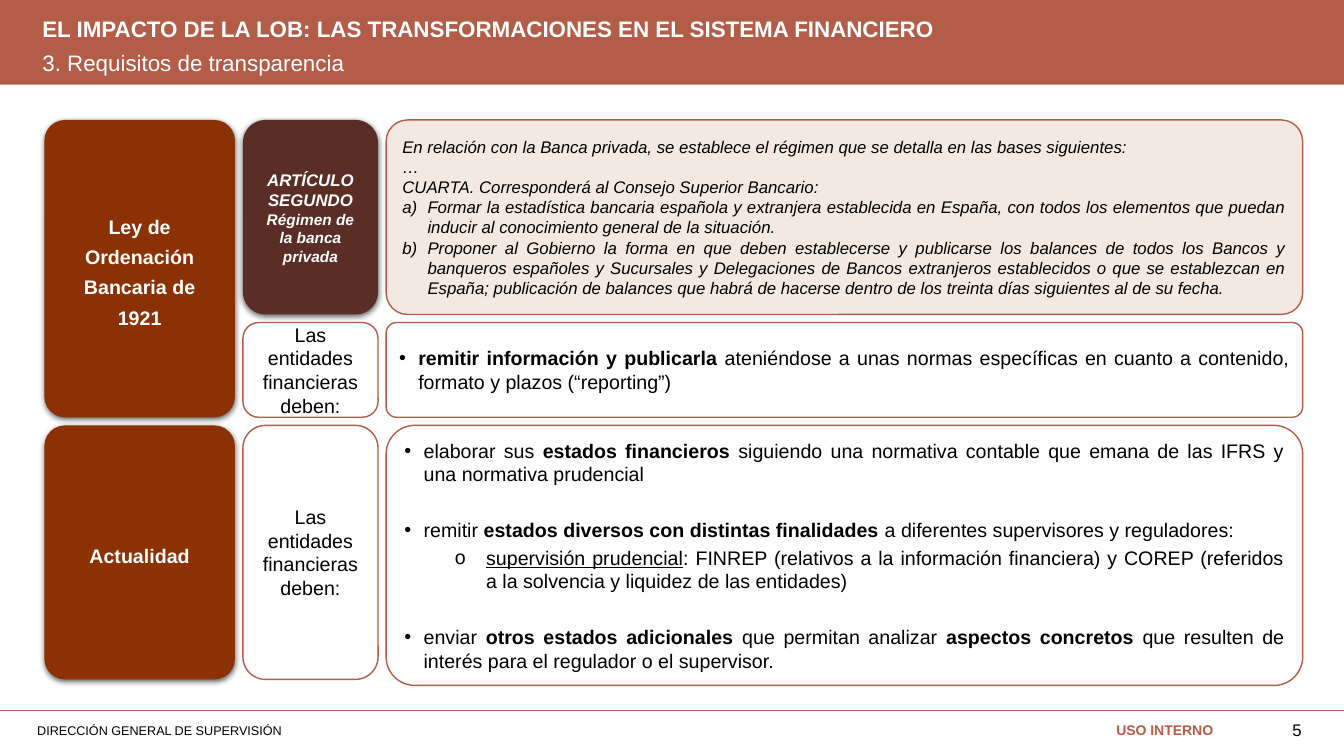
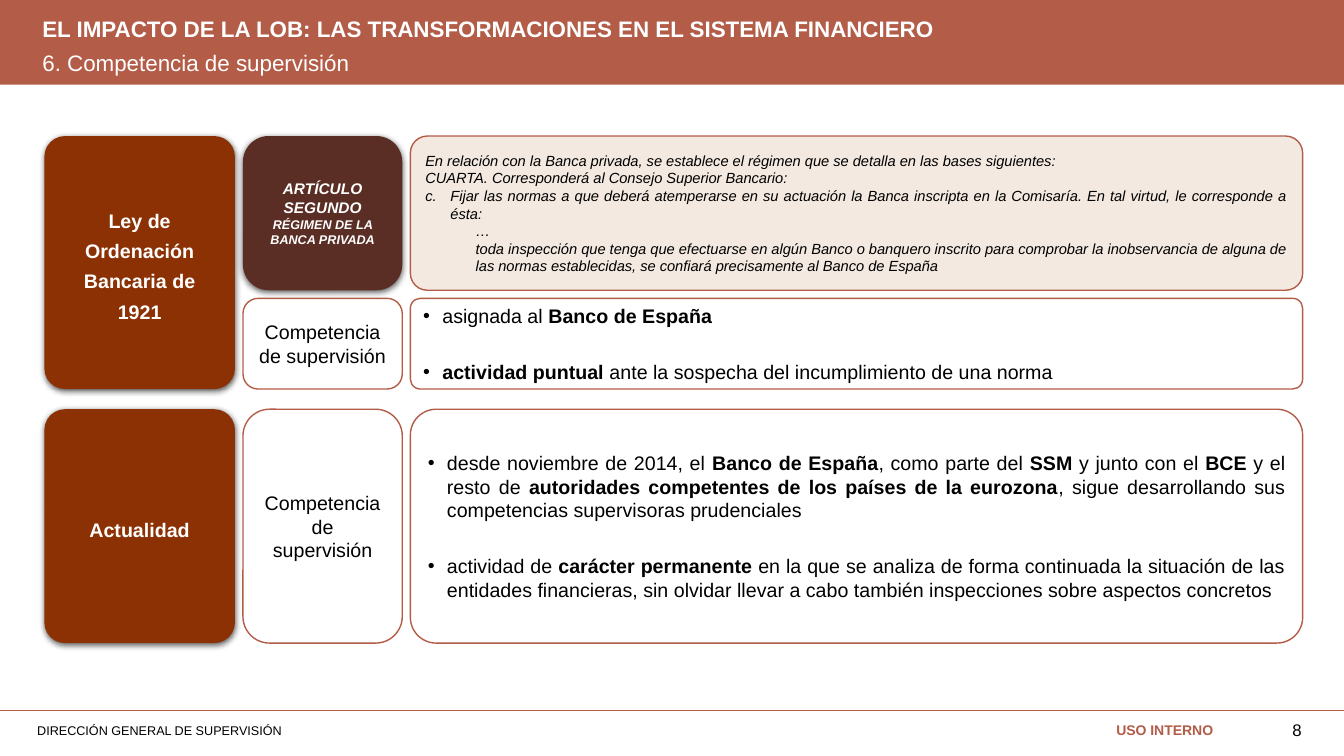
from lxml.etree import SubElement
from pptx import Presentation
from pptx.dml.color import RGBColor
from pptx.enum.shapes import MSO_CONNECTOR, MSO_SHAPE
from pptx.enum.text import MSO_ANCHOR, MSO_AUTO_SIZE, PP_ALIGN
from pptx.oxml.ns import qn
from pptx.util import Inches, Pt

FONT = "Arial"
COLORS = {
    "brick": "B35C48",
    "rust": "8B3104",
    "brown": "5A2E24",
    "cream": "F3E9E1",
    "white": "FFFFFF",
    "black": "000000",
}
PAGE_WIDTH, PAGE_HEIGHT = 13.33, 7.5
LEFT, MIDDLE_LEFT, RIGHT = 0.44, 2.41, 12.92
GAP = 0.08
LEFT_WIDTH = MIDDLE_LEFT - GAP - LEFT
LABEL_ROUNDING, QUOTE_ROUNDING = 0.108, 0.11
BLANK_LINE = 20
TITLE = "EL IMPACTO DE LA LOB: LAS TRANSFORMACIONES EN EL SISTEMA FINANCIERO"
LAW, TODAY = "Ley de Ordenación Bancaria de 1921", "Actualidad"

QUOTE_INTRO = "En relación con la Banca privada, se establece el régimen que se detalla en las bases siguientes:"
QUOTE_FOURTH = "CUARTA. Corresponderá al Consejo Superior Bancario:"
DOT = {"bullet": "•", "margin": 0.19, "hanging": 0.19, "after": 3}
DOT_APART = {**DOT, "before": BLANK_LINE}
LETTER = {"bullet": "alphaLcParenR", "margin": 0.25, "hanging": 0.25}
NESTED = {"bullet": "o", "margin": 0.81, "hanging": 0.31, "after": 3}

PAGES = [
    {
        "number": "5",
        "subtitle": "3. Requisitos de transparencia",
        "top": 1.19,
        "heights": (1.93, 0.94, 2.52),
        "section_gap": GAP,
        "last_height": 2.58,
        "middle_width": 1.34,
        "article": [("ARTÍCULO SEGUNDO", 12), ("Régimen de la banca privada", 11)],
        "question": "Las entidades financieras deben:",
        "quote_size": 12,
        "quote": [
            (QUOTE_INTRO, {}),
            ("…", {}),
            (QUOTE_FOURTH, {}),
            ("Formar la estadística bancaria española y extranjera establecida en España, con todos los elementos "
             "que puedan inducir al conocimiento general de la situación.", LETTER),
            ("Proponer al Gobierno la forma en que deben establecerse y publicarse los balances de todos los Bancos "
             "y banqueros españoles y Sucursales y Delegaciones de Bancos extranjeros establecidos o que se "
             "establezcan en España; publicación de balances que habrá de hacerse dentro de los treinta días "
             "siguientes al de su fecha.", LETTER),
        ],
        "past": [
            ("*remitir información y publicarla* ateniéndose a unas normas específicas en cuanto a contenido, "
             "formato y plazos (“reporting”)", DOT),
        ],
        "present": [
            ("elaborar sus *estados financieros* siguiendo una normativa contable que emana de las IFRS y una "
             "normativa prudencial", DOT),
            ("remitir *estados diversos con distintas finalidades* a diferentes supervisores y reguladores:",
             DOT_APART),
            ("*supervisión prudencial*: FINREP (relativos a la información financiera) y COREP (referidos a la "
             "solvencia y liquidez de las entidades)", {**NESTED, "emphasis": "underline"}),
            ("enviar *otros estados adicionales* que permitan analizar *aspectos concretos* que resulten de interés "
             "para el regulador o el supervisor.", DOT_APART),
        ],
    },
    {
        "number": "8",
        "subtitle": "6. Competencia de supervisión",
        "top": 1.35,
        "heights": (1.53, 0.9, 2.32),
        "section_gap": 0.2,
        "last_height": 2.32,
        "middle_width": 1.58,
        "article": [("ARTÍCULO SEGUNDO", 11), ("RÉGIMEN DE LA BANCA PRIVADA", 9)],
        "question": "Competencia de supervisión",
        "quote_size": 10.5,
        "quote": [
            (QUOTE_INTRO, {}),
            (QUOTE_FOURTH, {}),
            ("Fijar las normas a que deberá atemperarse en su actuación la Banca inscripta en la Comisaría. En tal "
             "virtud, le corresponde a ésta:", {**LETTER, "bullet": "alphaLcPeriod", "start": 3}),
            ("…", {"margin": 0.5}),
            ("toda inspección que tenga que efectuarse en algún Banco o banquero inscrito para comprobar la "
             "inobservancia de alguna de las normas establecidas, se confiará precisamente al Banco de España",
             {"margin": 0.5}),
        ],
        "past": [
            ("asignada al *Banco de España*", DOT),
            ("*actividad puntual* ante la sospecha del incumplimiento de una norma", DOT_APART),
        ],
        "present": [
            ("desde noviembre de 2014, el *Banco de España*, como parte del *SSM* y junto con el *BCE* y el resto de "
             "*autoridades competentes de los países de la eurozona*, sigue desarrollando sus competencias "
             "supervisoras prudenciales", DOT),
            ("actividad de *carácter permanente* en la que se analiza de forma continuada la situación de las "
             "entidades financieras, sin olvidar llevar a cabo también inspecciones sobre aspectos concretos",
             DOT_APART),
        ],
    },
]


def color(name):
    return RGBColor.from_string(COLORS[name])


def place(shape, left, top, width, height):
    shape.left, shape.top = Inches(left), Inches(top)
    shape.width, shape.height = Inches(width), Inches(height)


def set_bullet(para, bullet, margin, hanging, start):
    properties = para._p.get_or_add_pPr()
    properties.set("marL", str(Inches(margin)))
    properties.set("indent", str(-Inches(hanging)))
    if bullet is None:
        SubElement(properties, qn("a:buNone"))
    elif len(bullet) == 1:
        SubElement(properties, qn("a:buFont"), typeface=FONT)
        SubElement(properties, qn("a:buChar"), char=bullet)
    else:
        SubElement(properties, qn("a:buAutoNum"), type=bullet, startAt=str(start))


def add_text(frame, text, size=14, ink="black", bold=False, italic=False, align=PP_ALIGN.LEFT, spacing=None,
             before=0, after=0, bullet=None, margin=0, hanging=0, start=1, emphasis="bold"):
    para = frame.paragraphs[0]
    if para.runs:
        para = frame.add_paragraph()
    para.alignment = align
    para.space_before, para.space_after = Pt(before), Pt(after)
    if spacing:
        para.line_spacing = spacing
    set_bullet(para, bullet, margin, hanging, start)
    for index, piece in enumerate(text.split("*")):
        if not piece:
            continue
        span = para.add_run()
        span.text = piece
        font = span.font
        font.name, font.size, font.bold, font.italic = FONT, Pt(size), bold, italic
        font.color.rgb = color(ink)
        if index % 2:
            setattr(font, emphasis, True)


def add_textbox(page, left, top, width, height, text, **style):
    box = page.shapes.add_textbox(Inches(left), Inches(top), Inches(width), Inches(height))
    box.text_frame.word_wrap = True
    add_text(box.text_frame, text, **style)
    return box


def fill_placeholder(shape, place_at, text, **style):
    place(shape, *place_at)
    frame = shape.text_frame
    frame.auto_size = MSO_AUTO_SIZE.NONE
    frame.vertical_anchor = MSO_ANCHOR.MIDDLE
    add_text(frame, text, size=16, ink="white", spacing=0.9, **style)


def add_shadow(shape):
    effects = shape.element.spPr.find(qn("a:effectLst"))
    shadow = SubElement(effects, qn("a:outerShdw"), blurRad=str(Pt(4.5)), dist=str(Pt(1.5)),
                        dir="5400000", algn="ctr", rotWithShape="0")
    tint = SubElement(shadow, qn("a:srgbClr"), val=COLORS["black"])
    SubElement(tint, qn("a:alpha"), val="63000")


def add_panel(page, left, top, width, height, fill, rounding=None, raised=False, kind=MSO_SHAPE.ROUNDED_RECTANGLE):
    panel = page.shapes.add_shape(kind, Inches(left), Inches(top), Inches(width), Inches(height))
    panel.shadow.inherit = False
    panel.fill.solid()
    panel.fill.fore_color.rgb = color(fill)
    if rounding:
        panel.adjustments[0] = rounding
    if raised:
        panel.line.fill.background()
        add_shadow(panel)
    else:
        panel.line.color.rgb = color("brick")
        panel.line.width = Pt(1)
    panel.text_frame.word_wrap = True
    panel.text_frame.vertical_anchor = MSO_ANCHOR.MIDDLE
    return panel


def add_label(page, top, height, text):
    panel = add_panel(page, LEFT, top, LEFT_WIDTH, height, "rust", LABEL_ROUNDING, raised=True)
    add_text(panel.text_frame, text, ink="white", bold=True, align=PP_ALIGN.CENTER, spacing=Pt(21.6), after=4.3)


def add_question(page, top, width, height, text):
    panel = add_panel(page, MIDDLE_LEFT, top, width, height, "white")
    add_text(panel.text_frame, text, align=PP_ALIGN.CENTER, after=3)


def add_article(page, top, width, height, lines):
    panel = add_panel(page, MIDDLE_LEFT, top, width, height, "brown", raised=True)
    for text, size in lines:
        add_text(panel.text_frame, text, size=size, ink="white", bold=True, italic=True, align=PP_ALIGN.CENTER)


def add_details(page, left, top, height, lines, fill="white", **style):
    panel = add_panel(page, left, top, RIGHT - left, height, fill, QUOTE_ROUNDING)
    for text, layout in lines:
        add_text(panel.text_frame, text, align=PP_ALIGN.JUSTIFY, **style, **layout)


def add_rule(page, top):
    rule = page.shapes.add_connector(MSO_CONNECTOR.STRAIGHT, 0, Inches(top), Inches(PAGE_WIDTH), Inches(top))
    rule.line.color.rgb = color("brick")
    rule.line.width = Pt(1)
    SubElement(rule.element.spPr, qn("a:effectLst"))
    return rule


def furnish_layout(layout, page):
    band = add_panel(page, 0, 0, PAGE_WIDTH, 0.84, "brick", kind=MSO_SHAPE.RECTANGLE)
    band.line.fill.background()
    shared = [
        band,
        add_rule(page, 7.05),
        add_textbox(page, 0.27, 7.14, 7.81, 0.28, "DIRECCIÓN GENERAL DE SUPERVISIÓN", size=9, spacing=0.9),
        add_textbox(page, 9.82, 7.11, 2.31, 0.32, "USO INTERNO", size=10, ink="brick", bold=True,
                    align=PP_ALIGN.RIGHT),
    ]
    for number, shape in enumerate(shared, start=101):
        shape.element.xpath(".//p:cNvPr")[0].set("id", str(number))
        layout.shapes.element.append(shape.element)


def add_header(page, content):
    fill_placeholder(page.shapes.title, (0.32, 0.15, 9.29, 0.31), TITLE, bold=True)
    fill_placeholder(page.placeholders[1], (0.32, 0.48, 9.29, 0.31), content["subtitle"])
    number = add_textbox(page, 12.22, 7.09, 0.69, 0.33, content["number"], size=12, align=PP_ALIGN.RIGHT)
    number.text_frame.margin_right = 0


def add_comparison(page, content):
    top, width = content["top"], content["middle_width"]
    quote_height, past_height, present_height = content["heights"]
    past_top = top + quote_height + GAP
    law_height = quote_height + GAP + past_height
    present_top = top + law_height + content["section_gap"]
    details_left = MIDDLE_LEFT + width + GAP

    add_label(page, top, law_height, LAW)
    add_label(page, present_top, present_height, TODAY)
    add_article(page, top, width, quote_height, content["article"])
    add_question(page, past_top, width, past_height, content["question"])
    add_question(page, present_top, width, present_height, content["question"])
    add_details(page, details_left, top, quote_height, content["quote"], "cream",
                size=content["quote_size"], italic=True)
    add_details(page, details_left, past_top, past_height, content["past"])
    add_details(page, details_left, present_top, content["last_height"], content["present"])


def main():
    deck = Presentation()
    deck.slide_width, deck.slide_height = Inches(PAGE_WIDTH), Inches(PAGE_HEIGHT)
    layout = deck.slide_layouts[1]
    pages = [deck.slides.add_slide(layout) for _ in PAGES]
    furnish_layout(layout, pages[0])
    for page, content in zip(pages, PAGES):
        add_header(page, content)
        add_comparison(page, content)
    deck.save("out.pptx")


if __name__ == "__main__":
    main()
